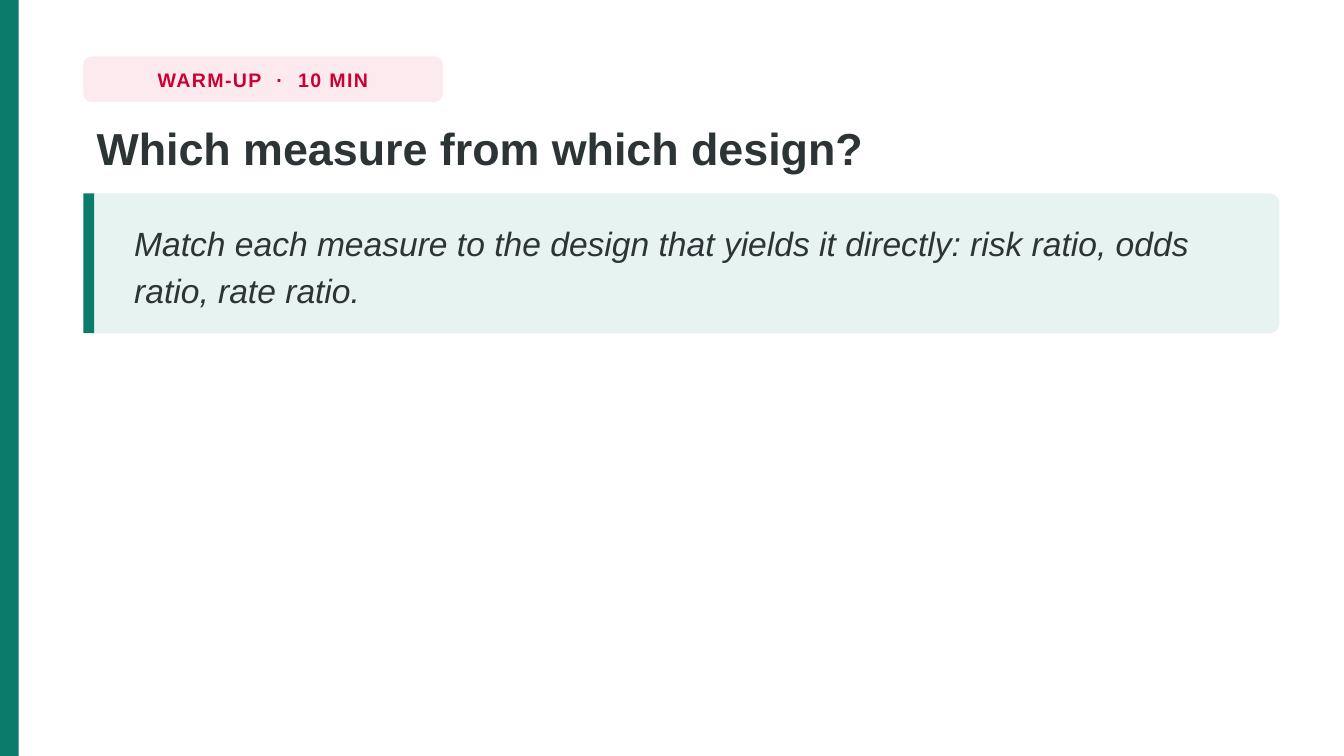
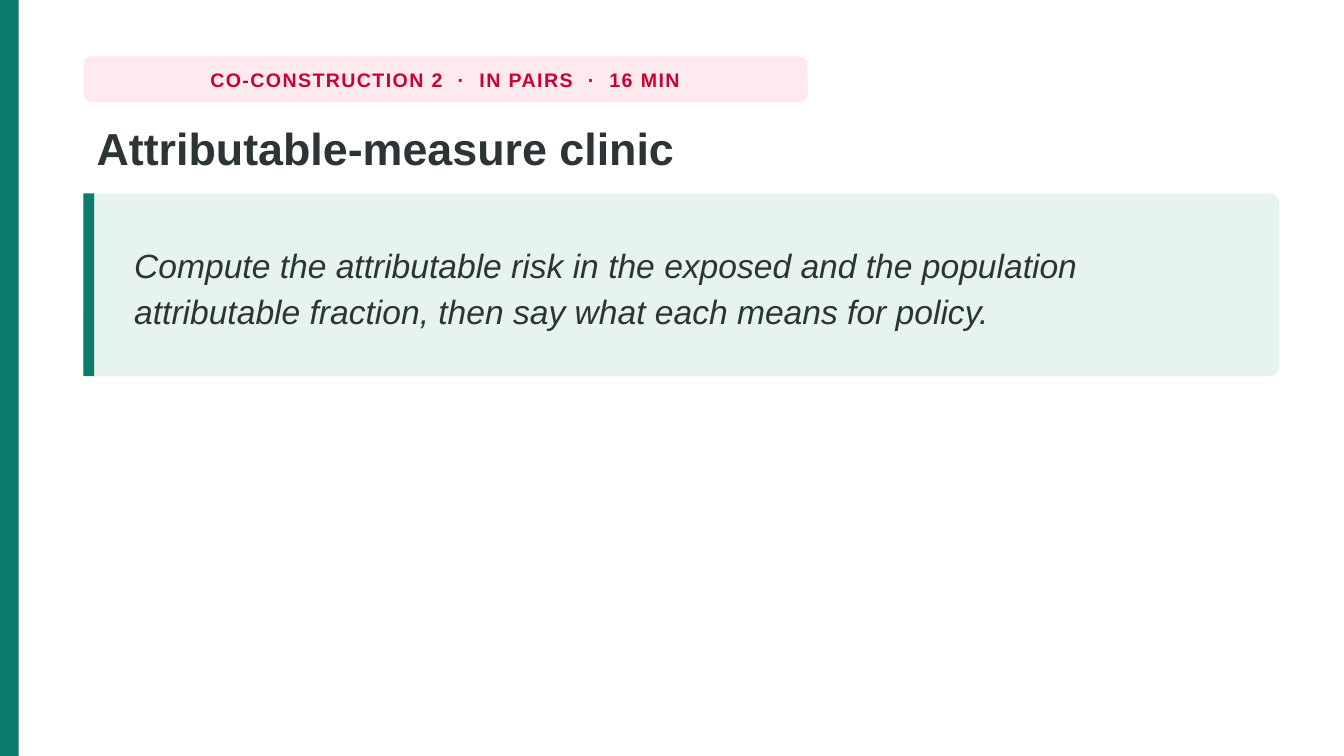
from pptx import Presentation
from pptx.dml.color import RGBColor
from pptx.enum.shapes import MSO_SHAPE
from pptx.enum.text import MSO_ANCHOR, PP_ALIGN
from pptx.util import Pt

TASKS = [
    {
        "tag": "WARM-UP  ·  10 MIN",
        "tag_width": 535,
        "title": "Which measure from which design?",
        "prompt": "Match each measure to the design that yields it directly: "
                  "risk ratio, odds ratio, rate ratio.",
        "card_height": 208,
    },
    {
        "tag": "CO-CONSTRUCTION 2  ·  IN PAIRS  ·  16 MIN",
        "tag_width": 1078,
        "title": "Attributable-measure clinic",
        "prompt": "Compute the attributable risk in the exposed and the population "
                  "attributable fraction, then say what each means for policy.",
        "card_height": 272,
    },
]

GREEN = RGBColor(0x0B, 0x7B, 0x6B)
MINT = RGBColor(0xE6, 0xF3, 0xF0)
ROSE = RGBColor(0xFD, 0xEA, 0xEF)
RED = RGBColor(0xCC, 0x00, 0x33)
INK = RGBColor(0x2D, 0x34, 0x36)

PX = 4572
WIDE, HIGH = 2000, 1125
LEFT, SPAN = 124, 1780
CARD_TOP = 288

TAG = {
    "font": {"size": Pt(10.5), "bold": True},
    "color": RED,
    "frame": {"word_wrap": False, "vertical_anchor": MSO_ANCHOR.MIDDLE},
    "para": {"alignment": PP_ALIGN.CENTER},
    "track": 80,
}
TITLE = {
    "font": {"size": Pt(24), "bold": True},
    "color": INK,
    "frame": {"word_wrap": True},
    "para": {"line_spacing": 1.02},
}
PROMPT = {
    "font": {"size": Pt(18), "italic": True},
    "color": INK,
    "frame": {"word_wrap": True, "vertical_anchor": MSO_ANCHOR.MIDDLE},
    "para": {"line_spacing": 1.16},
}


def scale(box):
    return [n * PX for n in box]


def apply(target, values):
    for name, value in values.items():
        setattr(target, name, value)


def add_block(slide, box, color, radius=0):
    kind = MSO_SHAPE.ROUNDED_RECTANGLE if radius else MSO_SHAPE.RECTANGLE
    shape = slide.shapes.add_shape(kind, *scale(box))
    shape.shadow.inherit = False
    shape.fill.solid()
    shape.fill.fore_color.rgb = color
    shape.line.fill.background()
    if radius:
        shape.adjustments[0] = radius / min(box[2:])


def add_text(slide, box, text, style):
    frame = slide.shapes.add_textbox(*scale(box)).text_frame
    apply(frame, style["frame"])
    para = frame.paragraphs[0]
    apply(para, style["para"])
    run = para.add_run()
    run.text = text
    apply(run.font, {"name": "Arial", **style["font"]})
    run.font.color.rgb = style["color"]
    if "track" in style:
        run._r.get_or_add_rPr().set("spc", str(style["track"]))


def add_task(deck, task):
    slide = deck.slides.add_slide(deck.slide_layouts[6])
    add_block(slide, (0, 0, 28, HIGH), GREEN)

    tag = (LEFT, 84, task["tag_width"], 68)
    add_block(slide, tag, ROSE, 12)
    add_text(slide, tag, task["tag"], TAG)
    add_text(slide, (LEFT, 168, SPAN, 112), task["title"], TITLE)

    high = task["card_height"]
    add_block(slide, (LEFT, CARD_TOP, SPAN, high), MINT, 14)
    add_block(slide, (LEFT, CARD_TOP, 16, high), GREEN)
    add_text(slide, (LEFT + 56, CARD_TOP + 10, SPAN - 110, high - 20), task["prompt"], PROMPT)


def main():
    deck = Presentation()
    deck.slide_width, deck.slide_height = scale((WIDE, HIGH))
    for task in TASKS:
        add_task(deck, task)
    deck.save("out.pptx")


if __name__ == "__main__":
    main()
